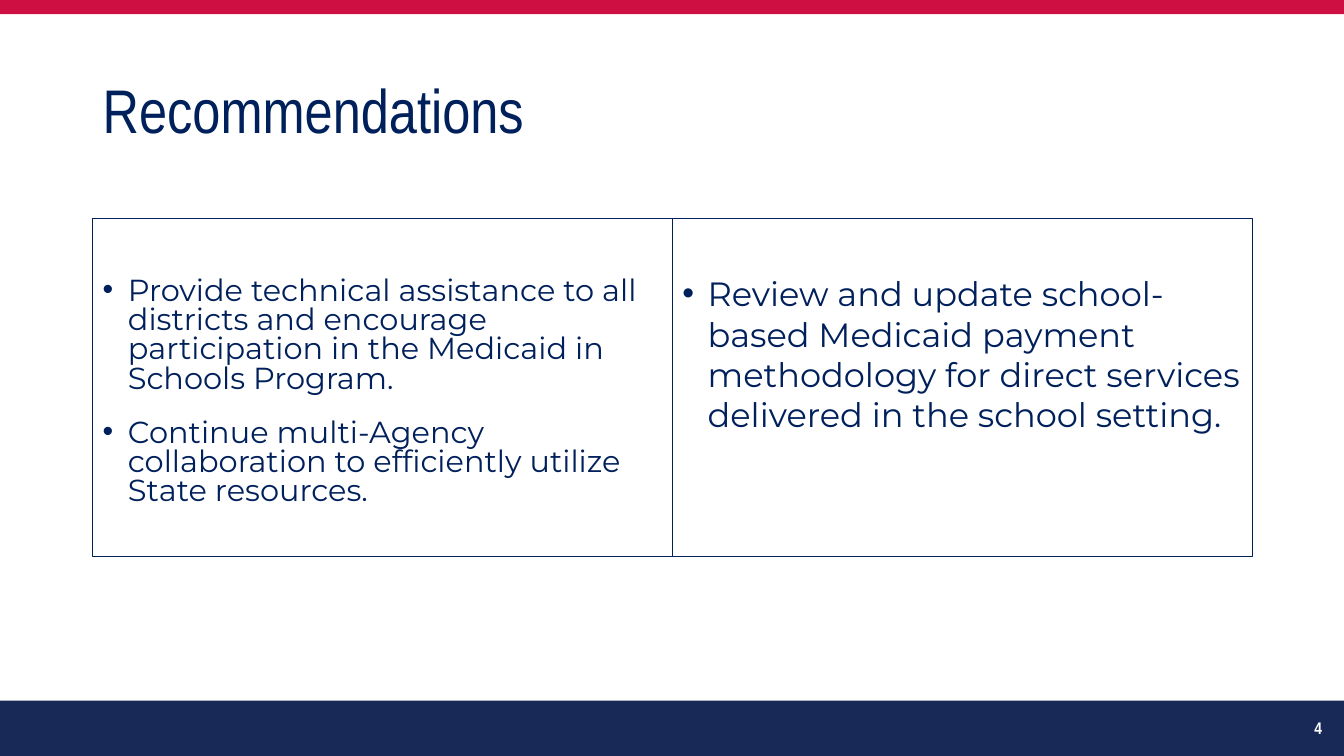
import dataclasses

import pptx
import pptx.dml.color
import pptx.enum.shapes
import pptx.enum.text
import pptx.oxml.ns
import pptx.util
from lxml import etree

Inches = pptx.util.Inches
Pt = pptx.util.Pt
Align = pptx.enum.text.PP_ALIGN
Anchor = pptx.enum.text.MSO_ANCHOR


@dataclasses.dataclass(frozen=True)
class Theme:
    """Colours, fonts and type sizes of the slide."""
    navy: str = "00205C"
    footer: str = "182857"
    red: str = "CD1041"
    white: str = "FFFFFF"
    head_font: str = "Arial Narrow"
    body_font: str = "Montserrat"
    title: float = 44
    left_body: float = 21.7
    right_body: float = 24
    number: float = 12


def rgb(value):
    """Return a colour object for a hex string."""
    return pptx.dml.color.RGBColor.from_string(value)


def add_bullet(p):
    """Give a paragraph a hanging round bullet."""
    pPr = p._p.get_or_add_pPr()
    pPr.set("marL", str(Inches(0.25)))
    pPr.set("indent", str(-Inches(0.25)))
    qn = pptx.oxml.ns.qn
    etree.SubElement(pPr, qn("a:buFont")).set("typeface", "Arial")
    etree.SubElement(pPr, qn("a:buChar")).set("char", "•")


def write(p, text, *, size, font, color, bold=False, align=Align.LEFT,
          spacing=1.0, after=0, bullet=False):
    """Write formatted text into a paragraph."""
    if bullet:
        add_bullet(p)
    p.alignment = align
    p.line_spacing = spacing
    p.space_before = Pt(0)
    p.space_after = Pt(after)
    r = p.add_run()
    r.text = text
    r.font.size = Pt(size)
    r.font.name = font
    r.font.bold = bold
    r.font.color.rgb = rgb(color)


class Deck:
    """Presentation with its theme and current slide."""

    def __init__(self, theme):
        """Start a widescreen deck with one blank slide."""
        self.theme = theme
        self.prs = pptx.Presentation()
        self.prs.slide_width = Inches(13.33)
        self.prs.slide_height = Inches(7.5)
        self.s = self.prs.slides.add_slide(self.prs.slide_layouts[6])

    def rect(self, x, y, w, h, fill=None, line=None):
        """Add a rectangle with an optional fill and outline."""
        sp = self.s.shapes.add_shape(
            pptx.enum.shapes.MSO_SHAPE.RECTANGLE,
            Inches(x), Inches(y), Inches(w), Inches(h))
        sp.shadow.inherit = False
        if fill:
            sp.fill.solid()
            sp.fill.fore_color.rgb = rgb(fill)
        else:
            sp.fill.background()
        if line:
            sp.line.color.rgb = rgb(line)
            sp.line.width = Pt(0.75)
        else:
            sp.line.fill.background()
        return sp

    def label(self, x, y, w, h, text, **fmt):
        """Add a vertically centred line of text."""
        sp = self.s.shapes.add_textbox(Inches(x), Inches(y), Inches(w), Inches(h))
        tf = sp.text_frame
        tf.word_wrap = True
        tf.vertical_anchor = Anchor.MIDDLE
        write(tf.paragraphs[0], text, font=self.theme.head_font, **fmt)

    def panel(self, x, y, w, h, items, top, **fmt):
        """Add an outlined box of bulleted paragraphs."""
        tf = self.rect(x, y, w, h, line=self.theme.navy).text_frame
        tf.word_wrap = True
        tf.vertical_anchor = Anchor.TOP
        tf.margin_top = Inches(top)
        for i, item in enumerate(items):
            p = tf.add_paragraph() if i else tf.paragraphs[0]
            write(p, item, font=self.theme.body_font, color=self.theme.navy,
                  after=18, bullet=True, **fmt)


def main():
    """Build and save the recommendations slide."""
    t = Theme()
    deck = Deck(t)
    deck.rect(0, 6.95, 13.33, 0.55, fill=t.footer)
    deck.rect(0, 0, 13.33, 0.14, fill=t.red)
    deck.label(0.92, 0.4, 11.5, 1.45, "Recommendations",
               size=t.title, color=t.navy, spacing=0.9)
    deck.label(10.21, 7.02, 3, 0.4, "4",
               size=t.number, color=t.white, bold=True, align=Align.RIGHT)

    left, top, width, height = 0.92, 2.17, 5.75, 3.35
    deck.panel(left, top, width, height, [
        "Provide technical assistance to all districts and encourage "
        "participation in the Medicaid in Schools Program.",
        "Continue multi-Agency collaboration to efficiently utilize "
        "State resources.",
    ], top=0.59, size=t.left_body, spacing=0.8)
    deck.panel(left + width, top, width, height, [
        "Review and update school-based Medicaid payment methodology "
        "for direct services delivered in the school setting.",
    ], top=0.54, size=t.right_body)
    deck.prs.save("out.pptx")


if __name__ == "__main__":
    main()
